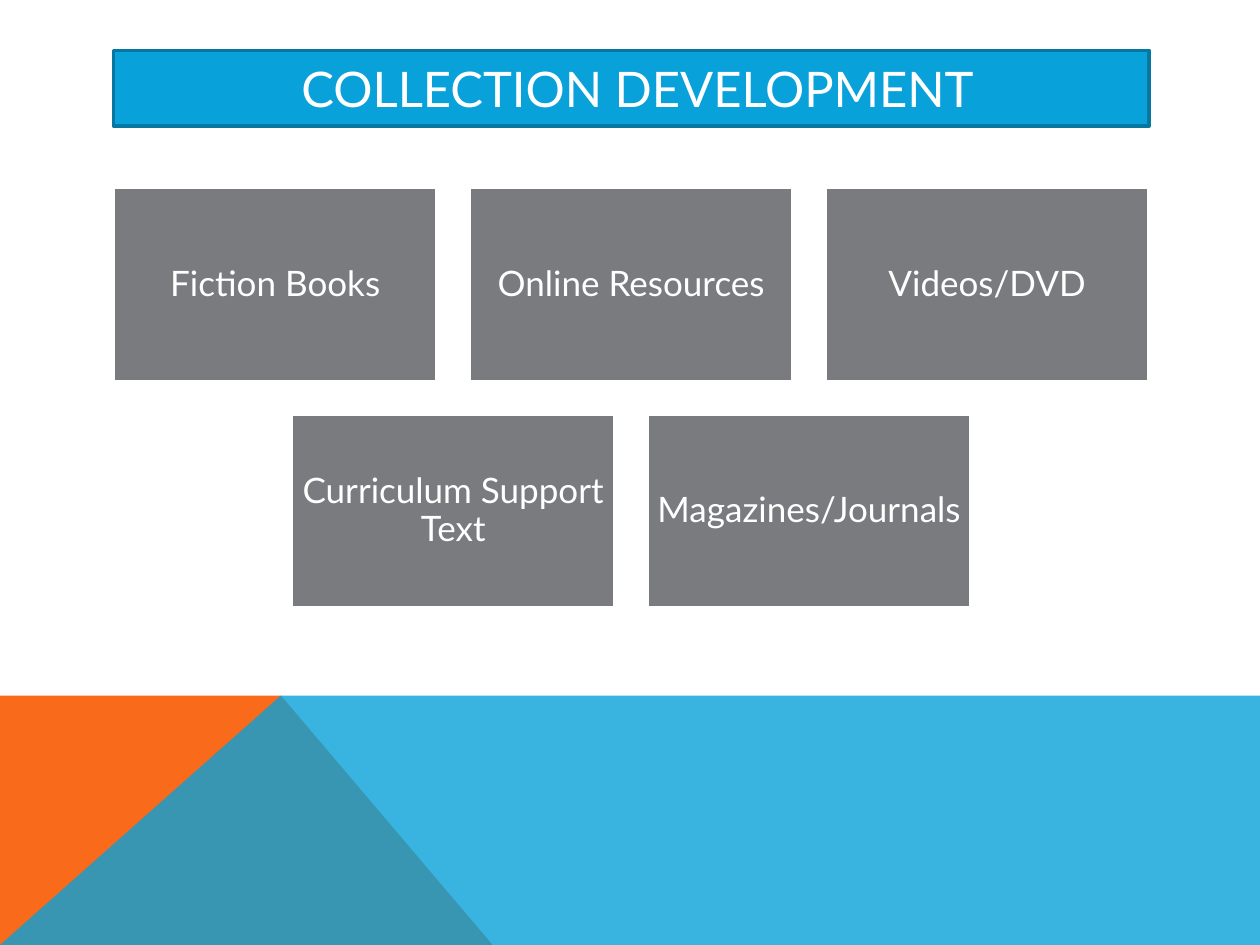
from lxml.etree import SubElement
from pptx import Presentation
from pptx.dml.color import RGBColor
from pptx.enum.shapes import MSO_SHAPE as Shape
from pptx.enum.text import MSO_ANCHOR as Anchor, PP_ALIGN as Align
from pptx.oxml.ns import qn
from pptx.util import Inches, Pt

WHITE = RGBColor(0xFF, 0xFF, 0xFF)
BLUE = RGBColor(0x08, 0xA1, 0xD9)
DARK_BLUE = RGBColor(0x06, 0x77, 0xA1)
ORANGE = RGBColor(0xF9, 0x6A, 0x1B)
GRAY = RGBColor(0x79, 0x7B, 0x7E)
FONT = "Lato"

WIDTH, HEIGHT = 10, 7.5
TITLE = " COLLECTION DEVELOPMENT"
ROWS = [
    ["Fiction Books", "Online Resources", "Videos/DVD"],
    ["Curriculum Support Text", "Magazines/Journals"],
]
BAND_TOP, PEAK = 5.52, 2.23
BANDS = [
    ([(0, HEIGHT), (0, BAND_TOP), (PEAK, BAND_TOP), (3.91, HEIGHT)], ORANGE, 100),
    ([(0, HEIGHT), (PEAK, BAND_TOP), (WIDTH, BAND_TOP), (WIDTH, HEIGHT)], BLUE, 80),
]
LEFT, TITLE_TOP, TITLE_WIDTH, TITLE_HEIGHT = 0.9, 0.4, 8.22, 0.6
GRID_TOP, CARD_WIDTH, CARD_HEIGHT = 1.49, 2.57, 1.54
GAP = (TITLE_WIDTH - 3 * CARD_WIDTH) / 2
CARD_INSET = Inches(0.08)
CARD_FRAME = dict.fromkeys(
    ("margin_left", "margin_top", "margin_right", "margin_bottom"), CARD_INSET)
CARD_PARA = {"line_spacing": 0.9, "space_after": Pt(7)}


def assign(target, values):
    for name, value in values.items():
        setattr(target, name, value)


def paint(shape, color):
    shape.shadow.inherit = False
    shape.fill.solid()
    shape.fill.fore_color.rgb = color


def add_band(page, points, color, opacity):
    corners = [(Inches(x), Inches(y)) for x, y in points]
    builder = page.shapes.build_freeform(*corners[0])
    builder.add_line_segments(corners[1:], close=True)
    band = builder.convert_to_shape()
    paint(band, color)
    band.line.fill.background()
    if opacity < 100:
        tint = band.fill._xPr.find(qn("a:solidFill"))[0]
        SubElement(tint, qn("a:alpha")).set("val", str(opacity * 1000))


def add_box(page, place, text, size, fill, line, frame_format, para_format):
    box = page.shapes.add_shape(Shape.RECTANGLE, *map(Inches, place))
    paint(box, fill)
    box.line.color.rgb = line
    box.line.width = Pt(2)
    frame = box.text_frame
    assign(frame, {"word_wrap": True, "vertical_anchor": Anchor.MIDDLE, **frame_format})
    para = frame.paragraphs[0]
    assign(para, {"alignment": Align.CENTER, **para_format})
    span = para.add_run()
    span.text = text
    assign(span.font, {"name": FONT, "size": Pt(size)})
    span.font.color.rgb = WHITE


def main():
    deck = Presentation()
    assign(deck, {"slide_width": Inches(WIDTH), "slide_height": Inches(HEIGHT)})
    page = deck.slides.add_slide(deck.slide_layouts[6])
    for points, color, opacity in BANDS:
        add_band(page, points, color, opacity)
    add_box(page, (LEFT, TITLE_TOP, TITLE_WIDTH, TITLE_HEIGHT),
            TITLE, 28, BLUE, DARK_BLUE, {}, {})
    for row, labels in enumerate(ROWS):
        row_width = len(labels) * (CARD_WIDTH + GAP) - GAP
        row_left = LEFT + (TITLE_WIDTH - row_width) / 2
        top = GRID_TOP + row * (CARD_HEIGHT + GAP)
        for column, label in enumerate(labels):
            left = row_left + column * (CARD_WIDTH + GAP)
            add_box(page, (left, top, CARD_WIDTH, CARD_HEIGHT),
                    label, 20, GRAY, WHITE, CARD_FRAME, CARD_PARA)
    deck.save("out.pptx")


if __name__ == "__main__":
    main()
